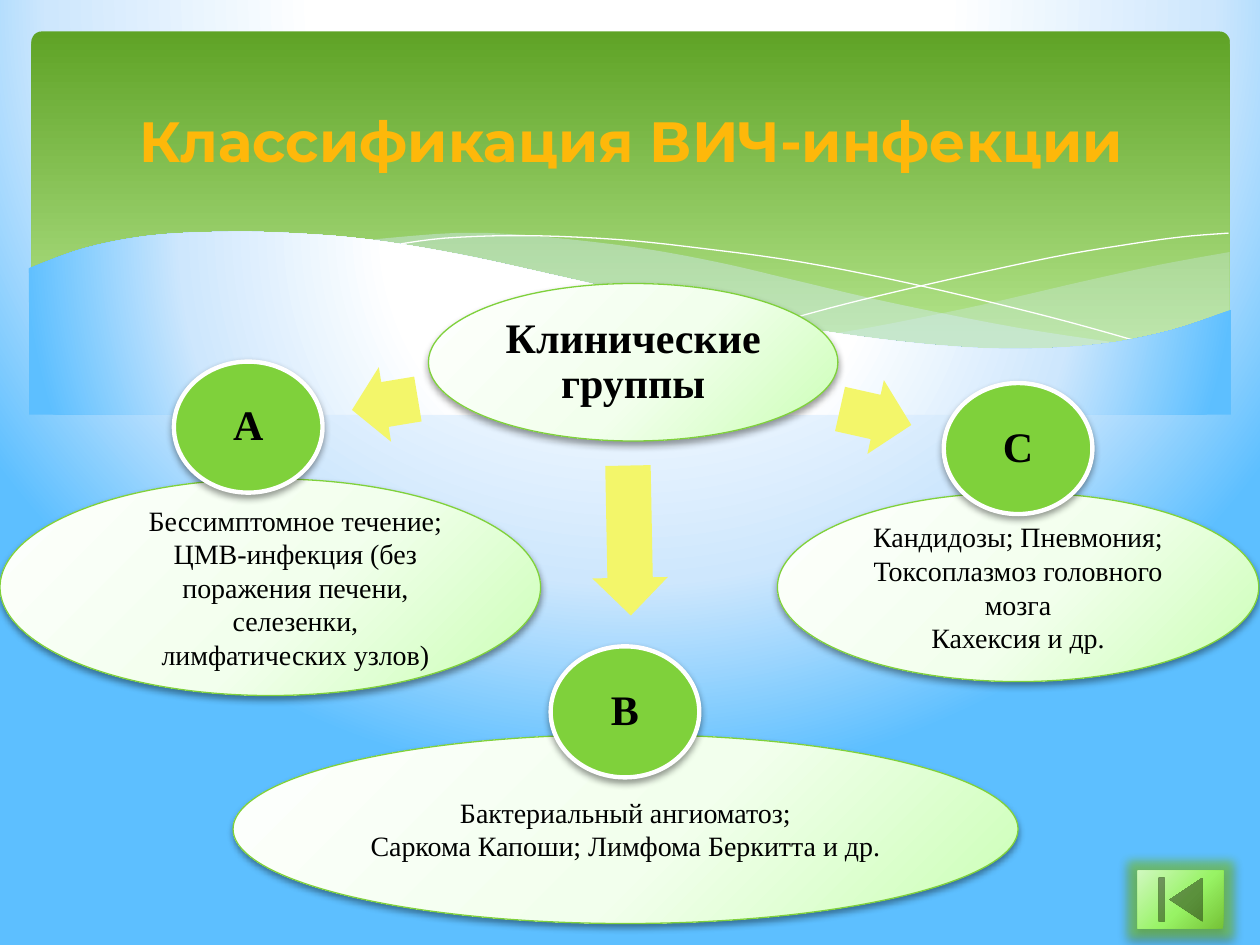
from pptx import Presentation
from pptx.dml.color import RGBColor
from pptx.enum.shapes import MSO_SHAPE
from pptx.enum.text import MSO_ANCHOR, MSO_AUTO_SIZE, PP_ALIGN
from pptx.oxml import parse_xml
from pptx.oxml.ns import nsdecls
from pptx.util import Inches, Pt

# Content: boxes are (left, top, width, height) in inches
TITLE = "Классификация ВИЧ-инфекции"
HUB = ("Клинические группы", (3.4, 2.25, 3.25, 1.25))
GROUPS = [
    {"letter": "А", "circle": (1.38, 2.87), "oval": (0, 3.8, 4.29, 1.72), "indent": 0.4,
     "arrow": (2.79, 2.91, 0.53, 0.6), "turn": 170.6,
     "signs": ["Бессимптомное течение;",
               "ЦМВ-инфекция (без поражения печени, селезенки, лимфатических узлов)"]},
    {"letter": "С", "circle": (7.49, 3.04), "oval": (6.17, 3.91, 3.82, 1.5), "indent": 0,
     "arrow": (6.66, 3.01, 0.58, 0.6), "turn": 12.6,
     "signs": ["Кандидозы; Пневмония;", "Токсоплазмоз головного мозга",
               "Кахексия и др."]},
    {"letter": "В", "circle": (4.37, 5.13), "oval": (1.85, 5.83, 6.23, 1.5), "indent": 0,
     "arrow": (4.4, 3.99, 1.19, 0.6), "turn": 88.9,
     "signs": ["Бактериальный ангиоматоз;", "Саркома Капоши; Лимфома Беркитта и др."]},
]
CIRCLE_SIZE = (1.18, 1.04)

# Header waves: key points of smooth edges; a shape may have several edges
RIGHT_WAVE = [
    [(9.76, 2), (9.21, 2.1), (8.61, 2.23), (7.79, 2.42), (7.06, 2.57), (6.61, 2.65)],
    [(6.61, 2.65), (7.05, 2.71), (7.57, 2.76), (8.03, 2.78), (8.54, 2.76),
     (9.05, 2.69), (9.42, 2.59), (9.76, 2.47)],
]
MIDDLE_WAVE = [
    [(8.93, 2.73), (8.07, 2.6), (7.06, 2.4), (6.29, 2.22), (5.69, 2.08),
     (5.02, 1.96), (4.2, 1.87), (3.61, 1.85), (2.86, 1.91)],
    [(2.86, 1.91), (3.62, 2.03), (4.49, 2.22), (5.3, 2.4), (6.01, 2.55),
     (6.8, 2.68), (7.48, 2.76), (8.07, 2.78), (8.93, 2.73)],
]
HAIRLINES = [
    [(3.09, 1.95), (3.53, 1.89), (4.16, 1.87), (4.89, 1.9), (5.56, 1.97),
     (6.36, 2.08), (7.27, 2.26), (8.31, 2.51), (9.07, 2.72)],
    [(6.13, 2.57), (6.72, 2.41), (7.48, 2.23), (8.36, 2.04), (8.95, 1.94),
     (9.38, 1.88), (9.75, 1.85)],
]
PAGE_WAVE = [
    [(9.77, 2.46), (9.3, 2.62), (8.75, 2.73), (8.09, 2.77), (7.44, 2.74),
     (6.68, 2.65), (5.79, 2.5), (4.47, 2.2), (3.65, 2.02), (2.92, 1.9),
     (2.3, 1.85), (1.77, 1.84), (1.19, 1.87), (0.67, 1.97), (0.23, 2.13)],
    [(0.23, 3.29), (9.77, 3.29)],
]

THEME = {
    "title_font": "Montserrat", "body_font": "Times New Roman",
    "title_size": 32.4, "label_size": 24, "body_size": 16,
    "title": "FEB80A", "text": "000000", "white": "FFFFFF",
    "green": "7FD13B", "arrow": "F3F66A", "wave": "D6ECFF",
    "sky": [(40, "FFFFFF"), (74, "CEE7FD"), (100, "5DBFFF")],
    "header": [(0, "5FA326"), (90, "B2E389")],
    "oval": [(0, "FEFFFE"), (55, "F2FFED"), (100, "CAFFB4")],
    "button": [(0, "D0F8BF"), (55, "98F365"), (100, "76C337")],
}
SKY_FOCUS = (20, -40, 20, 140)
SHAPE_FOCUS = (-40, -90, 140, 190)


def color(name):
    return RGBColor.from_string(THEME[name])


def paint_gradient(fill, parent, name, focus=None):
    """Radial gradient around focus, or top to bottom without one."""
    fill.gradient()
    stops = "".join(f'<a:gs pos="{pos * 1000}"><a:srgbClr val="{rgb}"/></a:gs>'
                    for pos, rgb in THEME[name])
    shade = '<a:lin ang="5400000" scaled="0"/>'
    if focus:
        sides = " ".join(f'{side}="{value * 1000}"' for side, value in zip("ltrb", focus))
        shade = f'<a:path path="circle"><a:fillToRect {sides}/></a:path>'
    old = parent.xpath("./a:gradFill")[0]
    parent.replace(old, parse_xml(f'<a:gradFill {nsdecls("a")} rotWithShape="1">'
                                  f'<a:gsLst>{stops}</a:gsLst>{shade}</a:gradFill>'))


def add_effect(shape, xml):
    shape.element.spPr.xpath("./a:effectLst")[0].append(parse_xml(xml))


def add_shadow(shape, alpha=40):
    add_effect(shape, f'<a:outerShdw {nsdecls("a")} blurRad="52000" dist="25400" '
                      f'dir="5400000" rotWithShape="0"><a:srgbClr val="000000">'
                      f'<a:alpha val="{alpha * 1000}"/></a:srgbClr></a:outerShdw>')


def add_preset(kind, box, line=None, width=0.75):
    shape = slide.shapes.add_shape(kind, *map(Inches, box))
    shape.shadow.inherit = False
    if line:
        shape.line.color.rgb = color(line)
        shape.line.width = Pt(width)
    else:
        shape.line.fill.background()
    return shape


def add_oval(box):
    oval = add_preset(MSO_SHAPE.OVAL, box, "green")
    paint_gradient(oval.fill, oval.element.spPr, "oval", SHAPE_FOCUS)
    add_shadow(oval)
    return oval


def write(shape, lines, size, bold=False, inset=0.1, indent=0, spacing=1.0):
    frame = shape.text_frame
    frame.word_wrap = True
    frame.vertical_anchor = MSO_ANCHOR.MIDDLE
    frame.margin_left = frame.margin_right = Inches(inset)
    frame.margin_top = frame.margin_bottom = Inches(inset / 2)
    frame.text = "\n".join(lines)
    for paragraph in frame.paragraphs:
        paragraph.alignment = PP_ALIGN.CENTER
        paragraph.line_spacing = spacing
        if indent:
            paragraph._p.get_or_add_pPr().set("marL", str(Inches(indent)))
        paragraph.font.name = THEME["body_font"]
        paragraph.font.size = Pt(THEME[size])
        paragraph.font.bold = bold
        paragraph.font.color.rgb = color("text")


def smooth_edge(points, steps=5):
    """Catmull-Rom curve through the key points."""
    if len(points) < 3:
        return points
    padded = [points[0], *points, points[-1]]
    curve = [points[0]]
    for a, b, c, d in zip(padded, padded[1:], padded[2:], padded[3:]):
        for step in range(1, steps + 1):
            t = step / steps
            curve.append(tuple(
                (2 * q + (r - p) * t + (2 * p - 5 * q + 4 * r - s) * t ** 2
                 + (3 * q - p - 3 * r + s) * t ** 3) / 2
                for p, q, r, s in zip(a, b, c, d)))
    return curve


def add_wave(edges, close=True):
    outline = [(Inches(x), Inches(y)) for edge in edges for x, y in smooth_edge(edge)]
    builder = slide.shapes.build_freeform(*outline[0])
    builder.add_line_segments(outline[1:], close=close)
    wave = builder.convert_to_shape()
    wave.shadow.inherit = False
    wave.line.fill.background()
    return wave


prs = Presentation()
prs.slide_width, prs.slide_height = Inches(10), Inches(7.5)
slide = prs.slides.add_slide(prs.slide_layouts[5])

# Background and header
paint_gradient(slide.background.fill, slide.element.xpath(".//p:bgPr")[0], "sky", SKY_FOCUS)
header = add_preset(MSO_SHAPE.ROUNDED_RECTANGLE, (0.25, 0.25, 9.51, 2.7))
header.adjustments[0] = 0.03
paint_gradient(header.fill, header.element.spPr, "header")
for edges, opacity in ((RIGHT_WAVE, 29), (MIDDLE_WAVE, 40)):
    wave = add_wave(edges)
    wave.fill.solid()
    wave.fill.fore_color.rgb = color("wave")
    wave.element.spPr.xpath("./a:solidFill/a:srgbClr")[0].append(
        parse_xml(f'<a:alpha {nsdecls("a")} val="{opacity * 1000}"/>'))
for curve in HAIRLINES:
    hairline = add_wave([curve], close=False)
    hairline.fill.background()
    hairline.line.color.rgb = color("white")
    hairline.line.width = Pt(0)
page_wave = add_wave(PAGE_WAVE)
paint_gradient(page_wave.fill, page_wave.element.spPr, "sky", SKY_FOCUS)

# Title, raised above the header
title = slide.shapes.title
slide.shapes.element.append(title.element)
title.left, title.top, title.width, title.height = map(Inches, (0.51, 0.6, 9, 1.02))
write(title, [TITLE], "title_size", bold=True)
title.text_frame.auto_size = MSO_AUTO_SIZE.NONE
title_font = title.text_frame.paragraphs[0].font
title_font.name = THEME["title_font"]
title_font.color.rgb = color("title")

# Signs of each group, then the hub with arrows and lettered circles
for group in GROUPS:
    write(add_oval(group["oval"]), group["signs"], "body_size", indent=group["indent"])
hub_text, hub_box = HUB
write(add_oval(hub_box), [hub_text], "label_size", bold=True, inset=0.03, spacing=0.9)
for group in GROUPS:
    arrow = add_preset(MSO_SHAPE.RIGHT_ARROW, group["arrow"])
    arrow.adjustments[0], arrow.adjustments[1] = 0.6, 0.5
    arrow.rotation = group["turn"]
    arrow.fill.solid()
    arrow.fill.fore_color.rgb = color("arrow")
    circle = add_preset(MSO_SHAPE.OVAL, (*group["circle"], *CIRCLE_SIZE), "white", 2.5)
    circle.fill.solid()
    circle.fill.fore_color.rgb = color("green")
    add_shadow(circle)
    write(circle, [group["letter"]], "label_size", bold=True, inset=0.03, spacing=0.9)

# Back button with a green glow
button = add_preset(MSO_SHAPE.ACTION_BUTTON_BEGINNING, (9.03, 6.91, 0.68, 0.46))
paint_gradient(button.fill, button.element.spPr, "button", SHAPE_FOCUS)
add_effect(button, f'<a:glow {nsdecls("a")} rad="140000"><a:srgbClr val="{THEME["green"]}">'
                   '<a:alpha val="60000"/></a:srgbClr></a:glow>')
add_shadow(button, 45)

prs.save("out.pptx")
